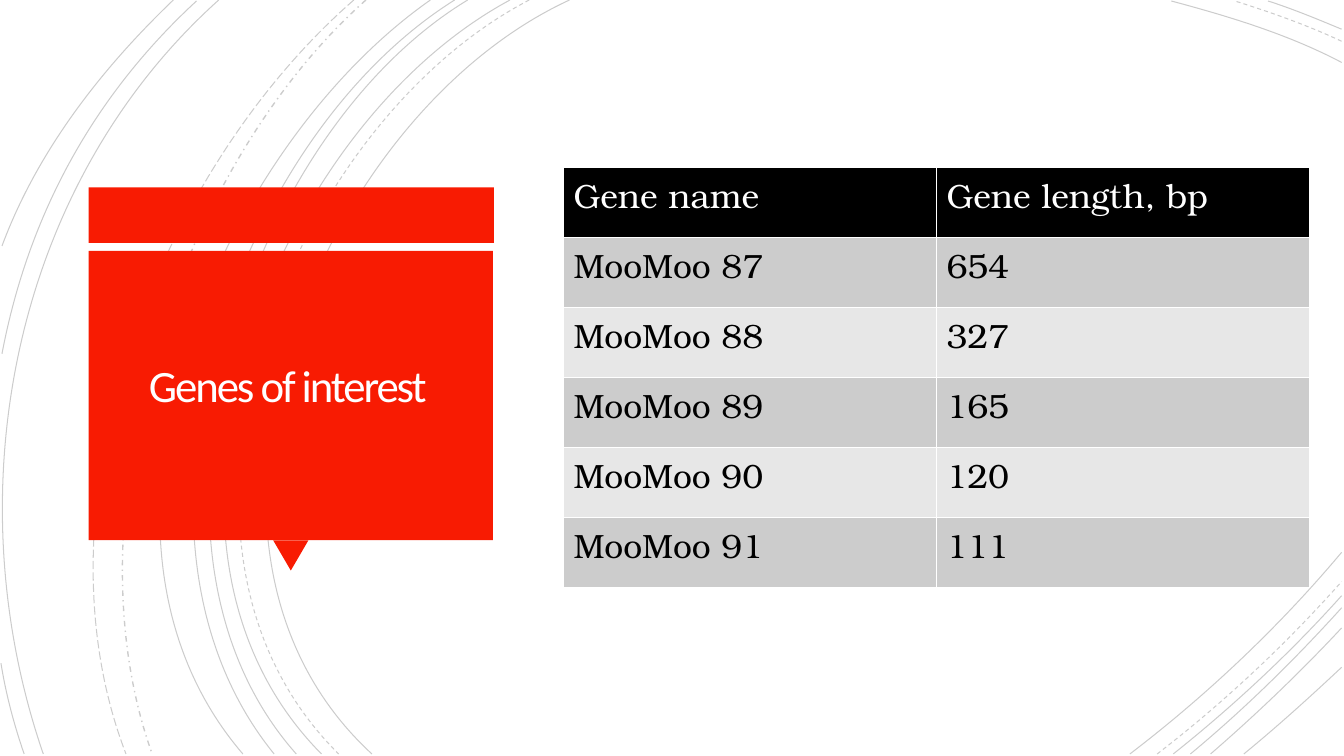
from lxml.etree import SubElement
from pptx import Presentation
from pptx.dml.color import RGBColor
from pptx.enum.dml import MSO_LINE
from pptx.enum.shapes import MSO_SHAPE
from pptx.enum.text import MSO_ANCHOR, MSO_AUTO_SIZE, PP_ALIGN
from pptx.oxml.ns import qn
from pptx.util import Inches, Pt

BLACK = RGBColor(0x00, 0x00, 0x00)
WHITE = RGBColor(0xFF, 0xFF, 0xFF)
TITLE_WHITE = RGBColor(0xFF, 0xFE, 0xFF)
RED = RGBColor(0xF8, 0x1B, 0x02)
DARK_BAND = RGBColor(0xCC, 0xCC, 0xCC)
LIGHT_BAND = RGBColor(0xE7, 0xE7, 0xE7)

SOLID, DASH = MSO_LINE.SOLID, MSO_LINE.DASH
DASH_DOT, LONG_DASH = MSO_LINE.DASH_DOT, MSO_LINE.LONG_DASH

# Grid of tenths of an inch
COLUMNS, ROWS = 133.33, 75
RIGHT_END, BOTTOM_END = 133.1, 74.8

# Left arcs from top to bottom: top x, two control points, bottom x, dash
LEFT_ARCS = [
    (56.5, (31.5, 11.5), (14.3, 54), 36.9, SOLID),
    (52.5, (28.5, 12.5), (12.3, 53.7), 33.6, DASH),
    (50.6, (27, 12.7), (11, 53.7), 31.9, SOLID),
    (46.4, (24.4, 13.3), (11, 54.1), 29.4, SOLID),
    (45.1, (23.1, 13.8), (9.7, 53.3), 27.2, SOLID),
    (42.7, (21.7, 14.7), (5.3, 52.9), 24.1, SOLID),
    (36.3, (17.6, 16.6), (6.5, 50.9), 15.1, DASH_DOT),
    (35.1, (15.7, 16.9), (2.9, 49.9), 12.5, LONG_DASH),
    (21.7, (1.1, 18.5), (-4.6, 49), 4.3, SOLID),
]
# Short arcs cut by the left edge: four points
EDGE_ARCS = [
    ((19.5, 0.1), (9.2, 9.6), (2.8, 21.4), (0.2, 35.1)),
    ((0.1, 65.8), (0.6, 68.9), (1.4, 71.9), (2.4, 74.8)),
    ((17.2, 0), (10, 6.9), (3.7, 15), (0.2, 24.4)),
]
# Top right arcs: y at the right edge, two control points, x at the top, dash
TOP_ARCS = [
    (6.2, (127.8, 3.4), (121.8, 1.6), 116.2, SOLID),
    (4.1, (129.7, 2.5), (126, 1.2), 122.5, DASH),
    (2.9, (130.7, 1.9), (128.3, 0.9), 125.8, SOLID),
]
# Bottom right arcs: x at the bottom, two control points, y at the right edge, dash
BOTTOM_ARCS = [
    (112.1, (119.7, 69), (126.9, 62.2), 54.8, SOLID),
    (114.8, (121.3, 69.8), (127.5, 64), 57.7, DASH),
    (116.4, (122.3, 70.1), (128, 64.8), 59.1, SOLID),
    (118.1, (123.4, 70.4), (128.4, 65.5), 60.3, SOLID),
    (120.1, (124.6, 70.9), (129, 66.7), 62.3, SOLID),
    (123.4, (126.7, 72.1), (129.9, 69.2), 66.2, SOLID),
]

GENES = [
    ("Gene name", "Gene length, bp"),
    ("MooMoo 87", "654"),
    ("MooMoo 88", "327"),
    ("MooMoo 89", "165"),
    ("MooMoo 90", "120"),
    ("MooMoo 91", "111"),
]


class GeneSlide:
    """Style and current slide, with one method per kind of element."""

    title_font, table_font = "Calibri", "TeX Gyre Bonum"

    def __init__(self, deck):
        self.slide = deck.slides.add_slide(deck.slide_layouts[5])
        self.shapes = self.slide.shapes

    @staticmethod
    def grid(*cells):
        return [Inches(cell / 10) for cell in cells]

    def add_text(self, paragraph, text, font_name, size, color):
        run = paragraph.add_run()
        run.text = text
        run.font.name, run.font.size = font_name, Pt(size)
        run.font.bold = False
        run.font.color.rgb = color
        return run

    def arc(self, points, dash=SOLID):
        start, *rest = [self.grid(*point) for point in points]
        builder = self.shapes.build_freeform(*start, scale=1.0)
        builder.add_line_segments(rest, close=False)
        curve = builder.convert_to_shape()
        curve.shadow.inherit = False
        curve.fill.background()
        curve.line.color.rgb = BLACK
        curve.line.width = Pt(1 if dash == DASH_DOT else 0.75)
        curve.line.dash_style = dash
        tint = curve._element.xpath("./p:spPr/a:ln//a:srgbClr")[0]
        SubElement(tint, qn("a:alpha"), val="20000")
        # Turn the three straight segments into one Bézier segment
        segments = curve._element.xpath(".//a:lnTo")
        bezier = SubElement(segments[0].getparent(), qn("a:cubicBezTo"))
        for segment in segments:
            bezier.append(segment[0])
            segment.getparent().remove(segment)

    def block(self, kind, left, top, width, height, rotation=0):
        block = self.shapes.add_shape(kind, *self.grid(left, top, width, height))
        block.rotation = rotation
        block.shadow.inherit = False
        block.fill.solid()
        block.fill.fore_color.rgb = RED
        block.line.fill.background()

    def title(self, text, left, top, width, height):
        title = self.shapes.title
        title.left, title.top, title.width, title.height = self.grid(
            left, top, width, height)
        frame = title.text_frame
        frame.word_wrap = True
        frame.auto_size = MSO_AUTO_SIZE.NONE
        frame.vertical_anchor = MSO_ANCHOR.BOTTOM
        frame.margin_left = frame.margin_right = frame.margin_top = Inches(0.25)
        frame.margin_bottom = 0
        paragraph = frame.paragraphs[0]
        paragraph.alignment = PP_ALIGN.CENTER
        paragraph.line_spacing = 0.85
        run = self.add_text(paragraph, text, self.title_font, 32, TITLE_WHITE)
        run.font._element.set("spc", "-150")
        # Bring the title in front of its red panel
        self.shapes._spTree.append(title._element)

    def table(self, records, left, top, width, height):
        table = self.shapes.add_table(
            len(records), len(records[0]),
            *self.grid(left, top, width, height)).table
        for row, record in enumerate(records):
            header = row == 0
            band = BLACK if header else DARK_BAND if row % 2 else LIGHT_BAND
            for column, text in enumerate(record):
                cell = table.cell(row, column)
                cell.fill.solid()
                cell.fill.fore_color.rgb = band
                self.add_text(cell.text_frame.paragraphs[0], text,
                              self.table_font, 24, WHITE if header else BLACK)


def main():
    deck = Presentation()
    deck.slide_width, deck.slide_height = GeneSlide.grid(COLUMNS, ROWS)
    genes = GeneSlide(deck)

    # Background arcs
    for top_x, first, second, bottom_x, dash in LEFT_ARCS:
        genes.arc([(top_x, 0), first, second, (bottom_x, BOTTOM_END)], dash)
    for points in EDGE_ARCS:
        genes.arc(points)
    for right_y, first, second, top_x, dash in TOP_ARCS:
        genes.arc([(RIGHT_END, right_y), first, second, (top_x, 0.1)], dash)
    for bottom_x, first, second, right_y, dash in BOTTOM_ARCS:
        genes.arc([(bottom_x, BOTTOM_END), first, second, (RIGHT_END, right_y)], dash)

    # Red title panel with its strip and pointer
    genes.block(MSO_SHAPE.RECTANGLE, 8.8, 18.6, 40.2, 5.5)
    genes.block(MSO_SHAPE.ISOSCELES_TRIANGLE, 27.1, 53.6, 3.5, 3, rotation=180)
    genes.block(MSO_SHAPE.RECTANGLE, 8.8, 24.9, 40.1, 28.7)
    genes.title("Genes of interest", 9.4, 34.1, 38.3, 6.7)

    # Gene lengths
    genes.table(GENES, 55.9, 16.6, 74, 41.7)

    deck.save("out.pptx")


if __name__ == "__main__":
    main()
